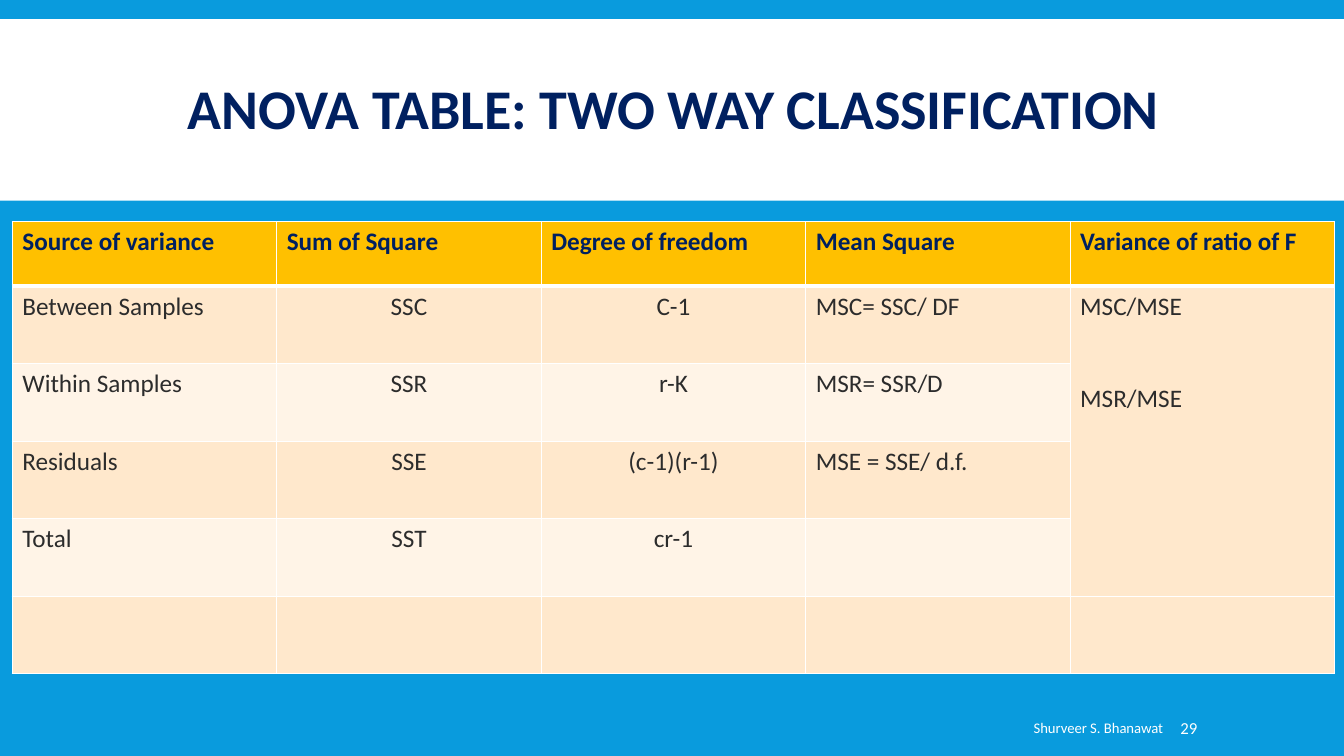
from dataclasses import dataclass

from lxml.etree import SubElement
from pptx import Presentation
from pptx.dml.color import RGBColor
from pptx.enum.shapes import MSO_SHAPE
from pptx.enum.text import MSO_ANCHOR, MSO_AUTO_SIZE, PP_ALIGN
from pptx.oxml.ns import qn
from pptx.slide import Slide
from pptx.table import Table, _Cell as Cell
from pptx.text.text import _Paragraph as Para
from pptx.util import Pt

BLUE = RGBColor(0x09, 0x9B, 0xDD)
NAVY = RGBColor(0x00, 0x20, 0x60)
GOLD = RGBColor(0xFF, 0xC0, 0x00)
PEACH = RGBColor(0xFF, 0xE8, 0xCC)
CREAM = RGBColor(0xFF, 0xF4, 0xE7)
INK = RGBColor(0x2C, 0x2C, 0x2C)
WHITE = RGBColor(0xFF, 0xFF, 0xFF)

WIDTH, HEIGHT = 960, 540
LEFT, SPAN = 8.8, 944.6
HEAD_ROW, BODY_ROW = 46, 55.4
CENTRED = (1, 2)
RATIO = 4

ROWS = [
    ["Source of variance", "Sum of Square", "Degree of freedom",
     "Mean Square", "Variance of ratio of F"],
    ["Between Samples", "SSC", "C-1", "MSC= SSC/ DF", ""],
    ["Within Samples", "SSR", "r-K", "MSR= SSR/D", ""],
    ["Residuals", "SSE", "(c-1)(r-1)", "MSE = SSE/ d.f.", ""],
    ["Total", "SST", "cr-1", "", ""],
    ["", "", "", "", ""],
]


@dataclass
class Note:
    text: str
    left: float
    width: float
    size: float
    align: PP_ALIGN
    inset: float


NOTES = [
    Note("Shurveer S. Bhanawat", 440.6, 397.4, 10.5, PP_ALIGN.RIGHT, 7.2),
    Note("29", 839.5, 74.2, 12, PP_ALIGN.LEFT, 3.6),
]


def style(para: Para, size: float, color: RGBColor, bold: bool = False) -> None:
    para.font.name = "Calibri"
    para.font.size = Pt(size)
    para.font.bold = bold
    para.font.color.rgb = color


def edge(cell: Cell, side: str, width: float) -> None:
    props = cell._tc.get_or_add_tcPr()
    line = SubElement(props, qn(f"a:{side}"), w=str(Pt(width)))
    fill = SubElement(line, qn("a:solidFill"))
    SubElement(fill, qn("a:srgbClr"), val=str(WHITE))


def add_title(slide: Slide) -> None:
    band = slide.shapes.add_shape(
        MSO_SHAPE.RECTANGLE, 0, Pt(13.7), Pt(WIDTH), Pt(129.6))
    band.shadow.inherit = False
    band.fill.solid()
    band.fill.fore_color.rgb = WHITE
    band.line.fill.background()

    title = slide.shapes.title
    title.element.addprevious(band.element)
    title.left, title.top = Pt(LEFT), Pt(20.9)
    title.width, title.height = Pt(SPAN), Pt(118.8)
    frame = title.text_frame
    frame.text = "ANOVA TABLE: TWO WAY CLASSIFICATION"
    frame.auto_size = MSO_AUTO_SIZE.NONE
    frame.vertical_anchor = MSO_ANCHOR.MIDDLE
    para = frame.paragraphs[0]
    para.alignment = PP_ALIGN.CENTER
    para.line_spacing = 0.85
    style(para, 40, NAVY, True)


def fill_cell(table: Table, row: int, col: int) -> None:
    cell = table.cell(row, col)
    head = row == 0
    for side in ("lnL", "lnR", "lnT", "lnB"):
        thick = (head and side == "lnB") or (row == 1 and side == "lnT")
        edge(cell, side, 3 if thick else 1)
    cell.fill.solid()
    cell.fill.fore_color.rgb = GOLD if head else PEACH if row % 2 else CREAM
    cell.text = ROWS[row][col]
    para = cell.text_frame.paragraphs[0]
    if not head and col in CENTRED:
        para.alignment = PP_ALIGN.CENTER
    style(para, 18, NAVY if head else INK, head)


def add_grid(slide: Slide) -> None:
    rows, cols = len(ROWS), len(ROWS[0])
    tall = HEAD_ROW + BODY_ROW * (rows - 1)
    table = slide.shapes.add_table(
        rows, cols, Pt(LEFT), Pt(158.4), Pt(SPAN), Pt(tall)).table
    for col in table.columns:
        col.width = Pt(SPAN / cols)
    for row in range(rows):
        table.rows[row].height = Pt(BODY_ROW if row else HEAD_ROW)
        for col in range(cols):
            fill_cell(table, row, col)

    # Both F ratios share one tall cell
    ratio = table.cell(1, RATIO)
    ratio.merge(table.cell(4, RATIO))
    ratio.text = "MSC/MSE\nMSR/MSE"
    for para in ratio.text_frame.paragraphs:
        style(para, 18, INK)
    ratio.text_frame.paragraphs[1].space_before = Pt(44)


def add_note(slide: Slide, note: Note) -> None:
    box = slide.shapes.add_textbox(
        Pt(note.left), Pt(505.4), Pt(note.width), Pt(28.8))
    frame = box.text_frame
    frame.word_wrap = True
    frame.vertical_anchor = MSO_ANCHOR.MIDDLE
    frame.margin_left = Pt(note.inset)
    frame.text = note.text
    para = frame.paragraphs[0]
    para.alignment = note.align
    style(para, note.size, WHITE)


def main() -> None:
    deck = Presentation()
    deck.slide_width, deck.slide_height = Pt(WIDTH), Pt(HEIGHT)
    slide = deck.slides.add_slide(deck.slide_layouts.get_by_name("Title Only"))
    slide.background.fill.solid()
    slide.background.fill.fore_color.rgb = BLUE

    # Title band, table, footer
    add_title(slide)
    add_grid(slide)
    for note in NOTES:
        add_note(slide, note)
    deck.save("out.pptx")


if __name__ == "__main__":
    main()
